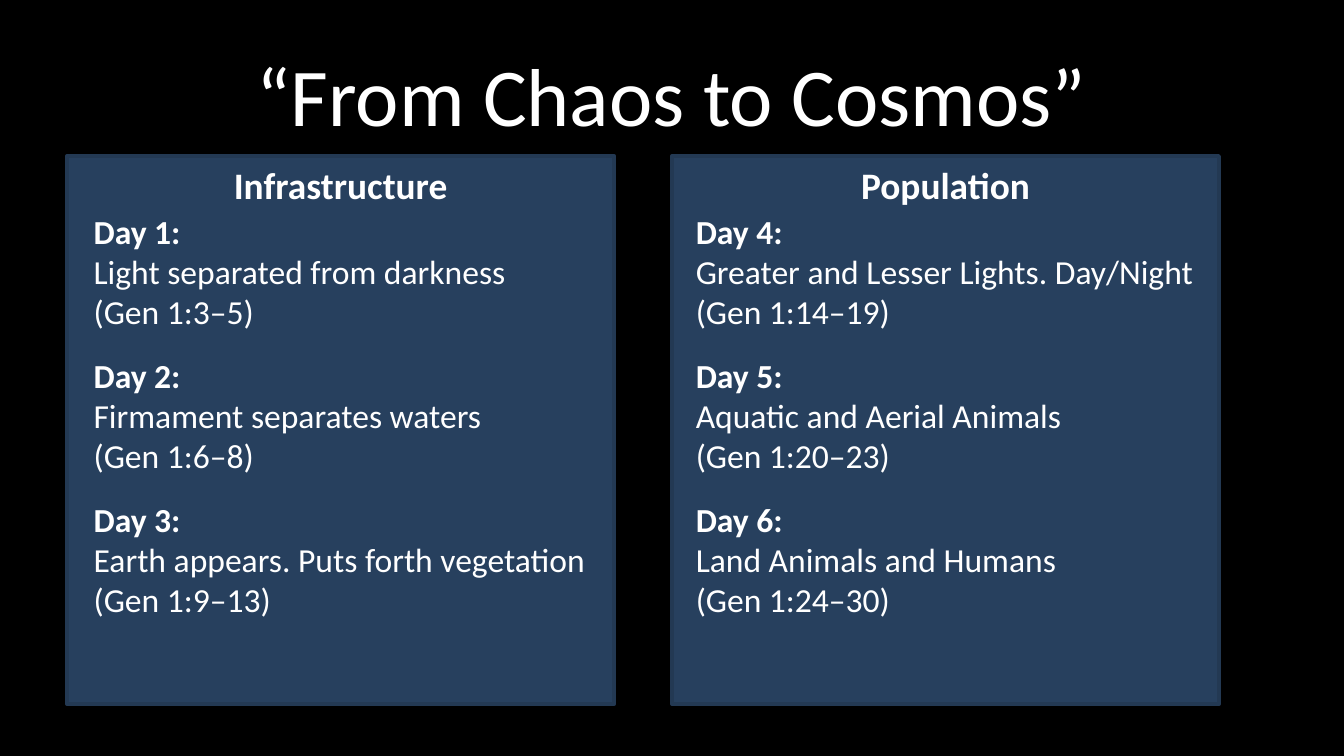
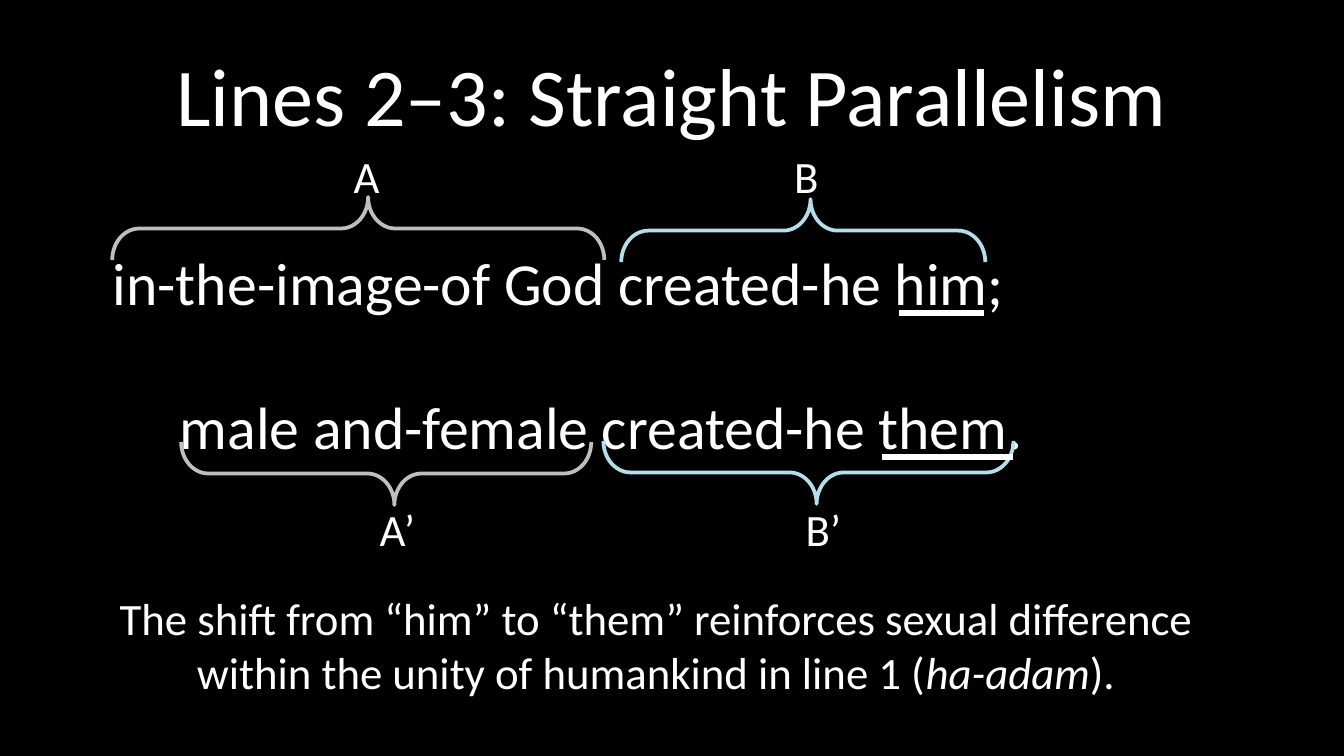
from dataclasses import dataclass

import lxml.etree
import pptx
import pptx.dml.color
import pptx.enum.shapes
import pptx.enum.text
import pptx.oxml.ns
import pptx.presentation
import pptx.shapes.autoshape
import pptx.slide
import pptx.text.text
import pptx.util
from pptx.util import Cm

# Shared style
FONT = "Calibri"
BLACK, WHITE = "000000", "FFFFFF"
PANEL_FILL, PANEL_LINE = "4F81BD", "233953"
GREY, PALE_BLUE = "BFBFBF", "B7DEE8"
CENTER = pptx.enum.text.PP_ALIGN.CENTER
LEFT = pptx.enum.text.PP_ALIGN.LEFT
TOP = pptx.enum.text.MSO_ANCHOR.TOP
MIDDLE = pptx.enum.text.MSO_ANCHOR.MIDDLE

# Layout of the two day columns, in centimetres
PANEL_TOP, PANEL_WIDTH, PANEL_HEIGHT = 2.95, 10.34, 10.36
DAY_TOP, DAY_PITCH, DAY_HEIGHT = 3.86, 2.72, 2.57
BRACE_DEPTH = 1.19


@dataclass(frozen=True)
class Day:
    number: int
    event: str
    verses: str
    width: float


@dataclass(frozen=True)
class Column:
    heading: str
    panel_left: float
    text_left: float
    days: tuple[Day, ...]


@dataclass(frozen=True)
class Brace:
    """A horizontal brace with its label; it points up or down."""
    label: str
    center_x: float
    center_y: float
    span: float
    color: str
    points_up: bool
    label_x: float
    label_width: float


@dataclass(frozen=True)
class Underline:
    start: float
    end: float
    y: float


COLUMNS = (
    Column("Infrastructure", 1.27, 1.52, (
        Day(1, "Light separated from darkness", "(Gen 1:3–5)", 9.73),
        Day(2, "Firmament separates waters", "(Gen 1:6–8)", 9.73),
        Day(3, "Earth appears. Puts forth vegetation", "(Gen 1:9–13)", 10.08),
    )),
    Column("Population", 12.7, 12.9, (
        Day(4, "Greater and Lesser Lights. Day/Night", "(Gen 1:14–19)", 11.23),
        Day(5, "Aquatic and Aerial Animals", "(Gen 1:20–23)", 9.73),
        Day(6, "Land Animals and Humans", "(Gen 1:24–30)", 10.08),
    )),
)
BRACES = (
    Brace("A", 6.77, 4.32, 9.3, GREY, True, 6.93, 1.02),
    Brace("B", 15.18, 4.36, 6.88, PALE_BLUE, True, 15.24, 0.97),
    Brace("B’", 15.28, 8.93, 7.75, PALE_BLUE, False, 15.56, 1.19),
    Brace("A’", 7.3, 8.95, 7.75, GREY, False, 7.51, 1.19),
)
UNDERLINES = (Underline(16.99, 18.59, 5.92), Underline(16.66, 19.15, 8.64))


def rgb(color: str) -> pptx.dml.color.RGBColor:
    return pptx.dml.color.RGBColor.from_string(color)


def add_run(paragraph: pptx.text.text._Paragraph, text: str, size: float,
            bold: bool = False, italic: bool = False) -> None:
    run = paragraph.add_run()
    run.text = text
    run.font.name = FONT
    run.font.size = pptx.util.Pt(size)
    run.font.bold = bold
    run.font.italic = italic
    run.font.color.rgb = rgb(WHITE)


def add_text_box(slide: pptx.slide.Slide, left: float, top: float, width: float,
                 height: float, wrap: bool = True) -> pptx.text.text.TextFrame:
    box = slide.shapes.add_textbox(Cm(left), Cm(top), Cm(width), Cm(height))
    box.text_frame.word_wrap = wrap
    return box.text_frame


def first_paragraph(frame: pptx.text.text.TextFrame,
                    alignment=LEFT) -> pptx.text.text._Paragraph:
    paragraph = frame.paragraphs[0]
    paragraph.alignment = alignment
    return paragraph


def add_titled_slide(presentation: pptx.presentation.Presentation,
                     title: str) -> pptx.slide.Slide:
    slide = presentation.slides.add_slide(presentation.slide_layouts[6])
    slide.background.fill.solid()
    slide.background.fill.fore_color.rgb = rgb(BLACK)
    frame = add_text_box(slide, 1.27, 0.58, 22.86, 2.39)
    frame.vertical_anchor = MIDDLE
    add_run(first_paragraph(frame, CENTER), title, 44)
    return slide


def set_fill_opacity(shape: pptx.shapes.autoshape.Shape, percent: int) -> None:
    color = shape.fill._xPr.find(".//" + pptx.oxml.ns.qn("a:srgbClr"))
    alpha = lxml.etree.SubElement(color, pptx.oxml.ns.qn("a:alpha"))
    alpha.set("val", str(percent * 1000))


def add_column(slide: pptx.slide.Slide, column: Column) -> None:
    # Translucent panel with its heading
    panel = slide.shapes.add_shape(
        pptx.enum.shapes.MSO_SHAPE.RECTANGLE, Cm(column.panel_left),
        Cm(PANEL_TOP), Cm(PANEL_WIDTH), Cm(PANEL_HEIGHT))
    panel.shadow.inherit = False
    panel.fill.solid()
    panel.fill.fore_color.rgb = rgb(PANEL_FILL)
    set_fill_opacity(panel, 50)
    panel.line.color.rgb = rgb(PANEL_LINE)
    panel.line.width = pptx.util.Pt(2)
    panel.text_frame.vertical_anchor = TOP
    add_run(first_paragraph(panel.text_frame, CENTER), column.heading, 20, bold=True)

    # One text box for each day
    for row, day in enumerate(column.days):
        frame = add_text_box(slide, column.text_left, DAY_TOP + row * DAY_PITCH,
                             day.width, DAY_HEIGHT)
        add_run(first_paragraph(frame), f"Day {day.number}:", 18, bold=True)
        for text in (day.event, day.verses):
            add_run(frame.add_paragraph(), text, 18)


def add_brace(slide: pptx.slide.Slide, brace: Brace) -> None:
    shape = slide.shapes.add_shape(
        pptx.enum.shapes.MSO_SHAPE.LEFT_BRACE,
        Cm(brace.center_x - BRACE_DEPTH / 2), Cm(brace.center_y - brace.span / 2),
        Cm(BRACE_DEPTH), Cm(brace.span))
    shape.rotation = 90 if brace.points_up else 270
    shape.adjustments[0] = 0.43
    shape.adjustments[1] = 0.48 if brace.points_up else 0.52
    shape.shadow.inherit = False
    shape.fill.background()
    shape.line.color.rgb = rgb(brace.color)
    shape.line.width = pptx.util.Pt(2)

    label_top = 2.69 if brace.points_up else 9.35
    frame = add_text_box(slide, brace.label_x - brace.label_width / 2, label_top,
                         brace.label_width, 1.27, wrap=False)
    add_run(first_paragraph(frame, CENTER), brace.label, 24)


def add_underline(slide: pptx.slide.Slide, underline: Underline) -> None:
    line = slide.shapes.add_connector(
        pptx.enum.shapes.MSO_CONNECTOR.STRAIGHT, Cm(underline.start),
        Cm(underline.y), Cm(underline.end), Cm(underline.y))
    line.line.color.rgb = rgb(WHITE)
    line.line.width = pptx.util.Pt(3)
    lxml.etree.SubElement(line._element.spPr, pptx.oxml.ns.qn("a:effectLst"))


def build_days_slide(presentation: pptx.presentation.Presentation) -> None:
    slide = add_titled_slide(presentation, "“From Chaos to Cosmos”")
    for column in COLUMNS:
        add_column(slide, column)


def build_parallelism_slide(presentation: pptx.presentation.Presentation) -> None:
    slide = add_titled_slide(presentation, "Lines 2–3: Straight Parallelism")

    # The two verse lines, the second one indented
    verse = add_text_box(slide, 1.88, 4.52, 21.64, 4.37)
    add_run(first_paragraph(verse), "in-the-image-of God created-he him;", 32)
    second_line = verse.add_paragraph()
    second_line.space_before = pptx.util.Pt(39)
    second_line._p.get_or_add_pPr().set("marL", str(Cm(1.27)))
    add_run(second_line, "male and-female created-he them.", 32)

    for brace in BRACES:
        add_brace(slide, brace)
    for underline in UNDERLINES:
        add_underline(slide, underline)

    # Conclusion
    conclusion = first_paragraph(add_text_box(slide, 1.27, 11.05, 22.25, 2.31), CENTER)
    add_run(conclusion, "The shift from “him” to “them” reinforces sexual difference", 24)
    conclusion.add_line_break()
    add_run(conclusion, "within the unity of humankind in line 1 (", 24)
    add_run(conclusion, "ha-adam", 24, italic=True)
    add_run(conclusion, ").", 24)


def main() -> None:
    presentation = pptx.Presentation()
    presentation.slide_width = Cm(25.4)
    presentation.slide_height = Cm(14.29)
    build_days_slide(presentation)
    build_parallelism_slide(presentation)
    presentation.save("out.pptx")


if __name__ == "__main__":
    main()
